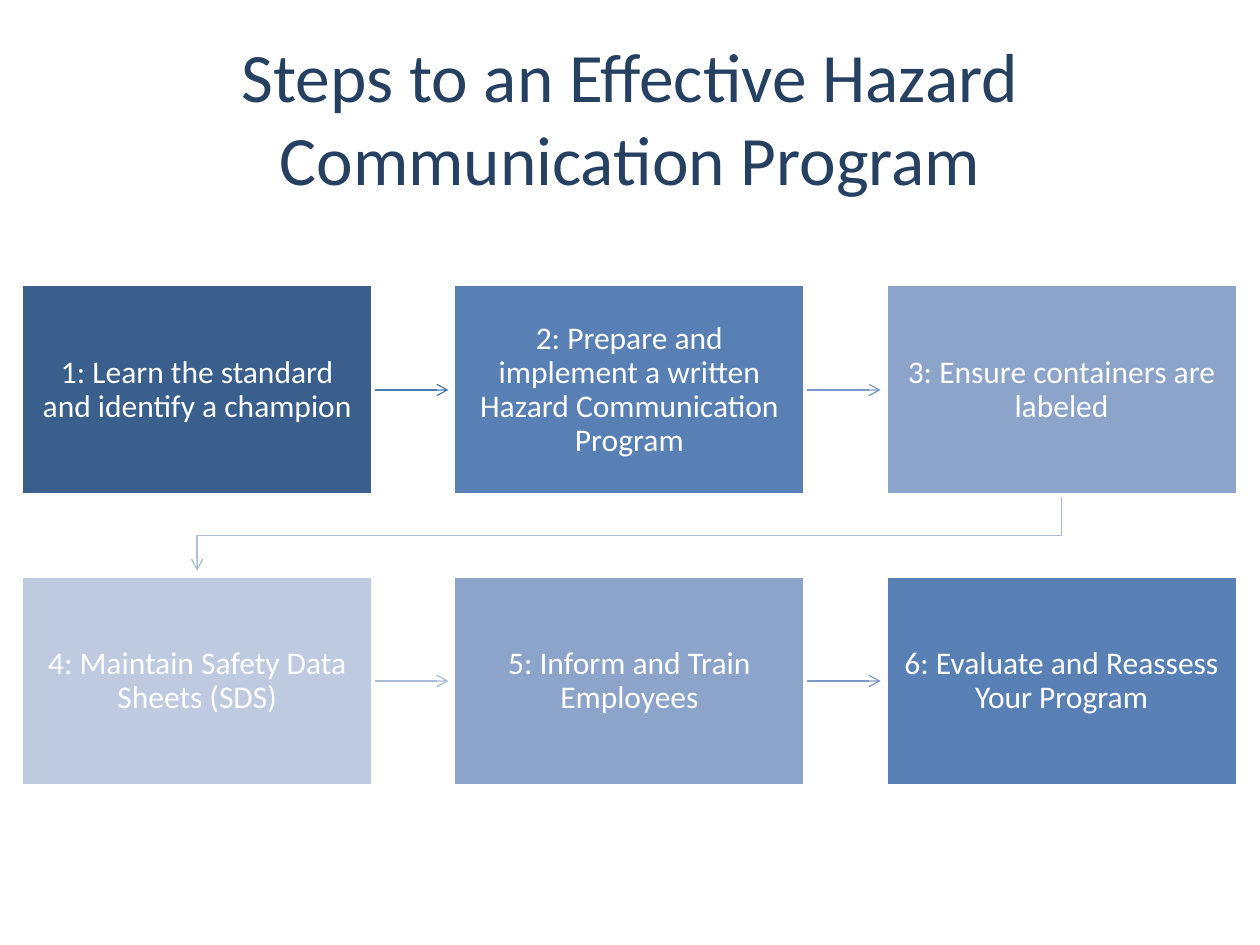
from pptx import Presentation
from pptx import util as u
from pptx.dml.color import RGBColor
from pptx.enum import shapes, text
from pptx.oxml.ns import qn
from lxml import etree

WHITE = RGBColor(0xFF, 0xFF, 0xFF)
NAVY = RGBColor(0x25, 0x40, 0x61)
DARK = RGBColor(0x3A, 0x5F, 0x8C)
MID = RGBColor(0x59, 0x80, 0xB5)
SOFT = RGBColor(0x8C, 0xA4, 0xC9)
PALE = RGBColor(0xBE, 0xCA, 0xDF)
ARROW_DARK = RGBColor(0x4B, 0x7B, 0xB5)
ARROW_MID = RGBColor(0x7C, 0x9A, 0xC5)
ARROW_PALE = RGBColor(0xAC, 0xBC, 0xD8)

TITLE = "Steps to an Effective Hazard Communication Program"
# text, box fill, colour of the arrow to the next step
STEPS = [
    ("1: Learn the standard and identify a champion", DARK, ARROW_DARK),
    ("2: Prepare and implement a written Hazard Communication Program", MID, ARROW_MID),
    ("3: Ensure containers are labeled", SOFT, ARROW_PALE),
    ("4: Maintain Safety Data Sheets (SDS)", PALE, ARROW_PALE),
    ("5: Inform and Train Employees", SOFT, ARROW_MID),
    ("6: Evaluate and Reassess Your Program", MID, None),
]

# Grid, in inches
COLS = 3
LEFT, TOP = 0.17, 2.26
BOX_W, BOX_H = 2.79, 1.67
STEP_X, STEP_Y = 3.43, 2.31
CLEARANCE = 0.04  # between an arrowhead and the next box


def box_origin(i):
    row, col = divmod(i, COLS)
    return LEFT + col * STEP_X, TOP + row * STEP_Y


def write(sp, words, size, color, margin, **para):
    tf = sp.text_frame
    frame = dict(word_wrap=True, vertical_anchor=text.MSO_ANCHOR.MIDDLE)
    for side in ("left", "right", "top", "bottom"):
        frame["margin_" + side] = u.Inches(margin[side in ("top", "bottom")])
    p = tf.paragraphs[0]
    r = p.add_run()
    r.text = words
    r.font.color.rgb = color
    for obj, values in (
        (tf, frame),
        (p, dict(alignment=text.PP_ALIGN.CENTER, **para)),
        (r.font, dict(name="Calibri", size=u.Pt(size))),
    ):
        for name, value in values.items():
            setattr(obj, name, value)


def style_arrow(sp, color):
    sp.line.color.rgb = color
    sp.line.width = u.Pt(0.75)
    etree.SubElement(sp.line._get_or_add_ln(), qn("a:tailEnd"), type="arrow")


def add_arrow(slide, i, color):
    """Join step i to the next: straight in a row, bent at a row's end."""
    x, y = box_origin(i)
    next_x, next_y = box_origin(i + 1)
    if next_y == y:
        mid_y = y + BOX_H / 2
        ends = [u.Inches(v) for v in (x + BOX_W, mid_y, next_x - CLEARANCE, mid_y)]
        sp = slide.shapes.add_connector(shapes.MSO_CONNECTOR.STRAIGHT, *ends)
        style_arrow(sp, color)
        etree.SubElement(sp._element.spPr, qn("a:effectLst"))
        return
    start_x, end_x = x + BOX_W / 2, next_x + BOX_W / 2
    bend_y = (y + BOX_H + next_y) / 2
    points = [(u.Inches(px), u.Inches(py)) for px, py in (
        (start_x, y + BOX_H), (start_x, bend_y),
        (end_x, bend_y), (end_x, next_y - CLEARANCE))]
    builder = slide.shapes.build_freeform(*points[0])
    builder.add_line_segments(points[1:], close=False)
    sp = builder.convert_to_shape()
    sp.fill.background()
    style_arrow(sp, color)
    sp.shadow.inherit = False


def add_box(slide, i, words, fill):
    sp = slide.shapes.add_shape(
        shapes.MSO_SHAPE.RECTANGLE,
        *[u.Inches(v) for v in (*box_origin(i), BOX_W, BOX_H)])
    sp.shadow.inherit = False
    sp.fill.solid()
    sp.fill.fore_color.rgb = fill
    sp.line.color.rgb = WHITE
    sp.line.width = u.Pt(2)
    write(sp, words, 18, WHITE, (0.14, 0.14), line_spacing=0.9)


def main():
    prs = Presentation()
    prs.slide_width, prs.slide_height = u.Inches(10), u.Inches(7.5)
    slide = prs.slides.add_slide(prs.slide_layouts[6])

    for i, (_, _, color) in enumerate(STEPS[:-1]):
        add_arrow(slide, i, color)
    for i, (words, fill, _) in enumerate(STEPS):
        add_box(slide, i, words, fill)

    title = slide.shapes.add_textbox(*[u.Inches(v) for v in (0.5, 0.3, 9, 1.25)])
    write(title, TITLE, 39.6, NAVY, (0.1, 0.05))
    prs.save("out.pptx")


if __name__ == "__main__":
    main()
